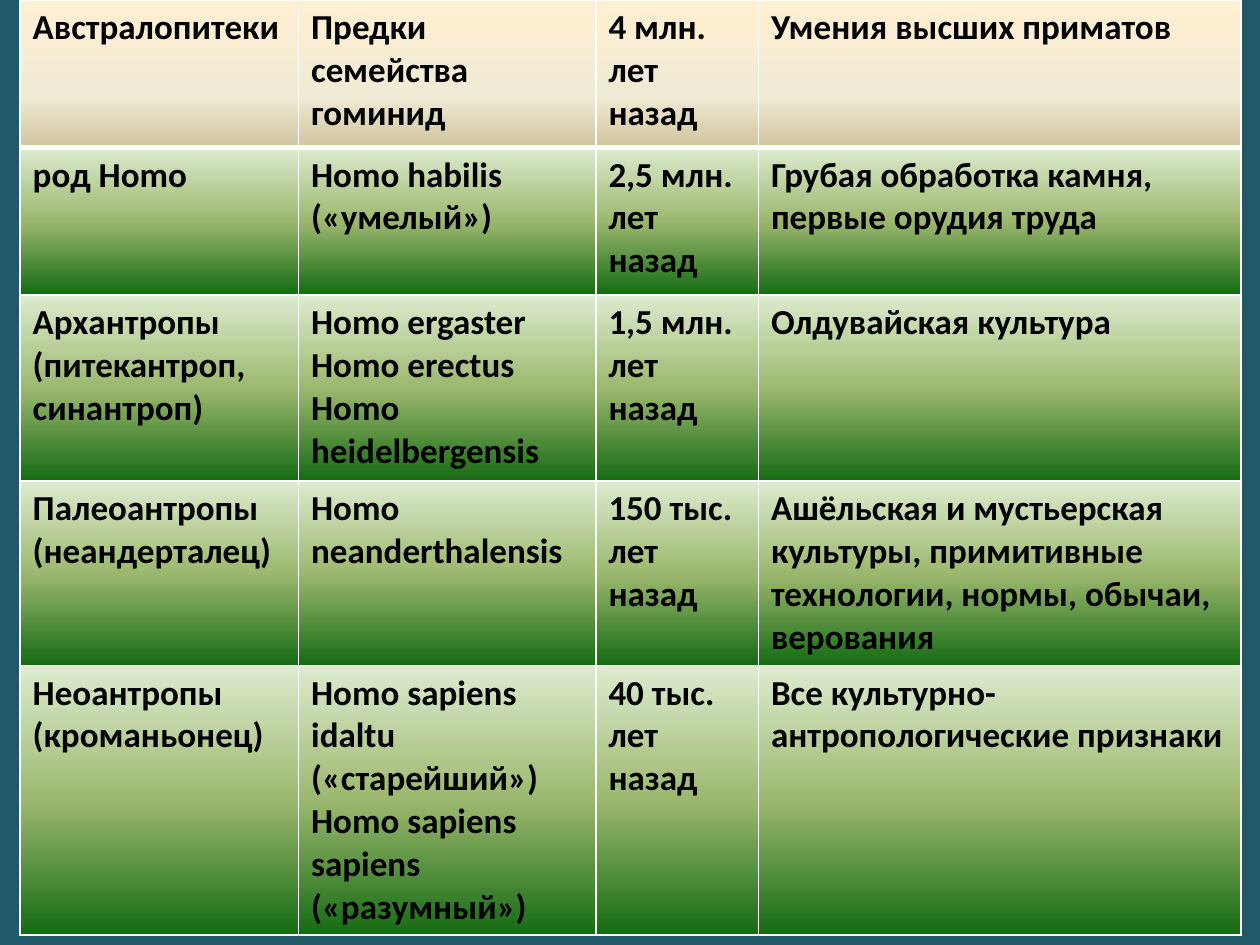
from lxml import etree
from pptx import Presentation
from pptx.dml.color import RGBColor
from pptx.oxml.ns import qn
from pptx.util import Inches, Pt

BACKGROUND = RGBColor(0x21, 0x59, 0x68)
WHITE = RGBColor(0xFF, 0xFF, 0xFF)
BLACK = RGBColor(0x00, 0x00, 0x00)
SAND = [
    (0, RGBColor(0xFF, 0xEF, 0xD1)),
    (65, RGBColor(0xF0, 0xEB, 0xD5)),
    (100, RGBColor(0xD1, 0xC3, 0x9F)),
]
GREEN = [
    (0, RGBColor(0xDD, 0xEB, 0xCF)),
    (50, RGBColor(0x9C, 0xB8, 0x6E)),
    (100, RGBColor(0x15, 0x6B, 0x13)),
]

SLIDE_WIDTH, SLIDE_HEIGHT = 10, 7.5
TABLE_BOX = (0.16, 0, 9.69, 7.36)
COLUMN_WEIGHTS = [2.21, 2.36, 1.29, 3.83]
ROW_WEIGHTS = [1.17, 1.17, 1.48, 1.44, 2.1]
CELL_FONT = {"name": "Calibri", "size": Pt(20), "bold": True}
THIN, THICK = 1, 3

STAGES = [
    ("Австралопитеки", "Предки семейства гоминид", "4 млн. лет назад",
     "Умения высших приматов"),
    ("род Homo", "Homo habilis («умелый»)", "2,5 млн. лет назад",
     "Грубая обработка камня, первые орудия труда"),
    ("Архантропы (питекантроп, синантроп)",
     "Homo ergaster\nHomo erectus\nHomo heidelbergensis",
     "1,5 млн. лет назад", "Олдувайская культура"),
    ("Палеоантропы (неандерталец)", "Homo neanderthalensis",
     "150 тыс. лет назад",
     "Ашёльская и мустьерская культуры, примитивные технологии, "
     "нормы, обычаи, верования"),
    ("Неоантропы\n(кроманьонец)",
     "Homo sapiens idaltu («старейший»)\n"
     "Homo sapiens sapiens («разумный»)",
     "40 тыс. лет назад", "Все культурно-антропологические признаки"),
]


def add_color(parent, color):
    etree.SubElement(parent, qn("a:srgbClr"), val=str(color))


def add_borders(properties, widths):
    for side, width in widths.items():
        line = etree.SubElement(properties, qn(f"a:ln{side}"), w=str(Pt(width)))
        add_color(etree.SubElement(line, qn("a:solidFill")), WHITE)


def add_gradient(properties, stops):
    """Fill from top to bottom; must follow the borders in the XML."""
    gradient = etree.SubElement(properties, qn("a:gradFill"), rotWithShape="1")
    stop_list = etree.SubElement(gradient, qn("a:gsLst"))
    for percent, color in stops:
        add_color(etree.SubElement(stop_list, qn("a:gs"), pos=str(percent * 1000)), color)
    etree.SubElement(gradient, qn("a:lin"), ang=str(90 * 60000), scaled="0")


def format_cell(cell, text, row_index):
    cell.text = text
    for paragraph in cell.text_frame.paragraphs:
        for name, value in CELL_FONT.items():
            setattr(paragraph.runs[0].font, name, value)
        paragraph.runs[0].font.color.rgb = BLACK
    properties = cell._tc.get_or_add_tcPr()
    add_borders(properties, {
        "L": THIN,
        "R": THIN,
        "T": THICK if row_index == 1 else THIN,
        "B": THICK if row_index == 0 else THIN,
    })
    add_gradient(properties, GREEN if row_index else SAND)


def add_stages_table(slide, box):
    left, top, width, height = box
    table = slide.shapes.add_table(
        len(STAGES), len(COLUMN_WEIGHTS), *map(Inches, box)).table
    for column, weight in zip(table.columns, COLUMN_WEIGHTS):
        column.width = Inches(width * weight / sum(COLUMN_WEIGHTS))
    for row, weight in zip(table.rows, ROW_WEIGHTS):
        row.height = Inches(height * weight / sum(ROW_WEIGHTS))
    for row_index, texts in enumerate(STAGES):
        for column_index, text in enumerate(texts):
            format_cell(table.cell(row_index, column_index), text, row_index)


def main():
    presentation = Presentation()
    presentation.slide_width = Inches(SLIDE_WIDTH)
    presentation.slide_height = Inches(SLIDE_HEIGHT)
    slide = presentation.slides.add_slide(presentation.slide_layouts[6])
    slide.background.fill.solid()
    slide.background.fill.fore_color.rgb = BACKGROUND
    add_stages_table(slide, TABLE_BOX)
    presentation.save("out.pptx")


if __name__ == "__main__":
    main()
